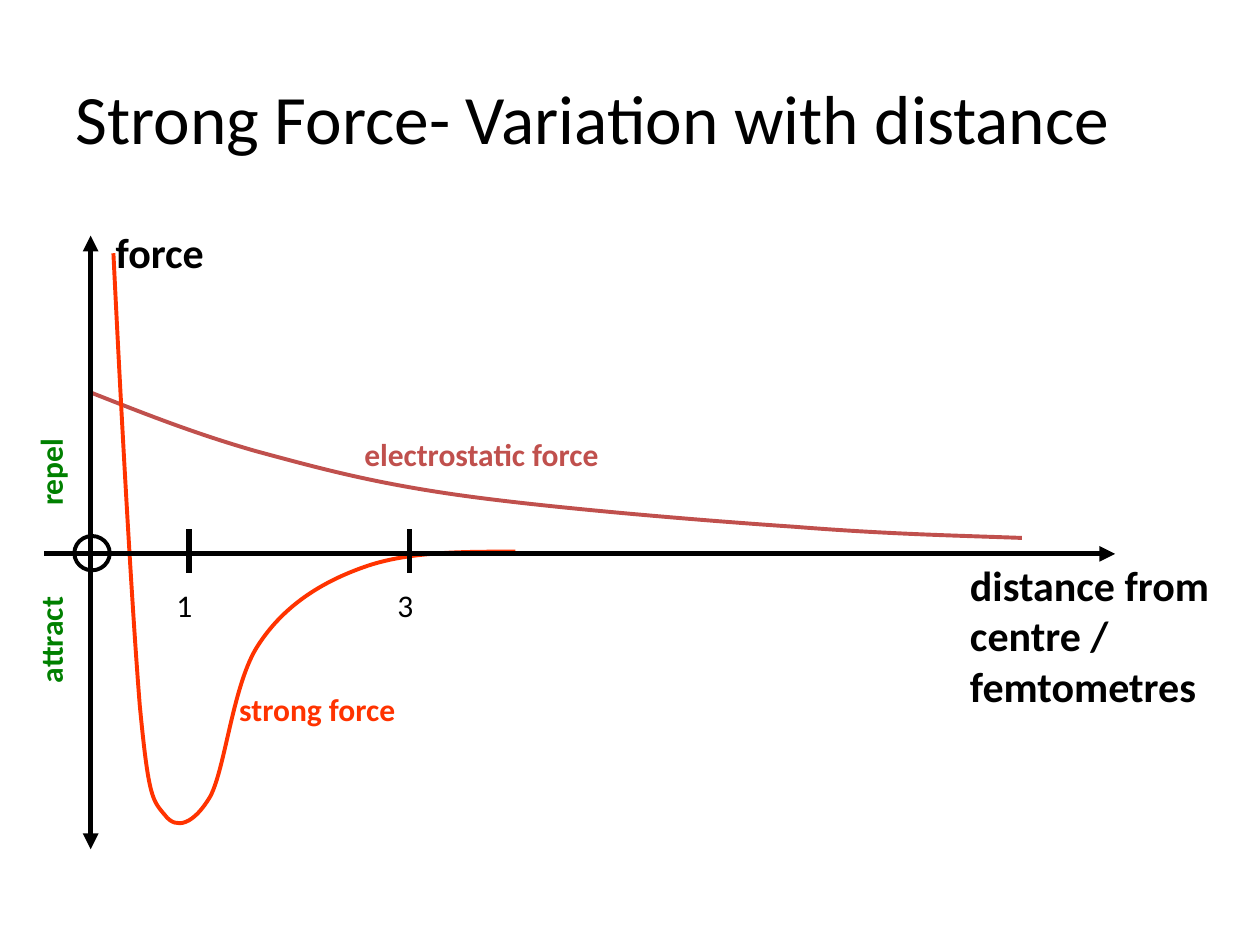
from dataclasses import dataclass

from lxml import etree
from pptx import Presentation
from pptx.dml.color import RGBColor
from pptx.enum import shapes, text
from pptx.oxml import ns
from pptx.util import Pt

FONT = "Calibri"
BLACK = RGBColor(0x00, 0x00, 0x00)
GREEN = RGBColor(0x00, 0x80, 0x00)
BRICK = RGBColor(0xC0, 0x50, 0x4D)
ORANGE = RGBColor(0xFF, 0x33, 0x00)

AXIS_X, AXIS_Y = 51.8, 316.5

Point = tuple[float, float]


@dataclass
class Label:
    words: str
    left: float
    top: float
    width: float
    height: float
    color: RGBColor = BLACK
    size: float = 18
    bold: bool = True
    rotation: float = 0
    tab: float = 0


@dataclass
class Line:
    start: Point
    end: Point
    head: bool = False
    tail: bool = False


@dataclass
class Curve:
    color: RGBColor
    knots: list[Point]  # start, then two controls and an end per section


def add_label(slide, label: Label) -> None:
    sp = slide.shapes.add_textbox(Pt(label.left), Pt(label.top),
                                  Pt(label.width), Pt(label.height))
    sp.rotation = label.rotation
    tf = sp.text_frame
    tf.word_wrap = True
    tf.auto_size = text.MSO_AUTO_SIZE.SHAPE_TO_FIT_TEXT
    p = tf.paragraphs[0]
    p.text = label.words
    if label.tab:
        tabs = etree.SubElement(p._p.get_or_add_pPr(), ns.qn("a:tabLst"))
        etree.SubElement(tabs, ns.qn("a:tab"), pos=str(Pt(label.tab)), algn="l")
    p.font.name, p.font.size, p.font.bold = FONT, Pt(label.size), label.bold
    p.font.color.rgb = label.color


def add_line(slide, line: Line) -> None:
    c = slide.shapes.add_connector(shapes.MSO_CONNECTOR.STRAIGHT,
                                   *map(Pt, line.start + line.end))
    c.line.color.rgb = BLACK
    c.line.width = Pt(3)
    ln = c.line._get_or_add_ln()
    for tag, wanted in (("a:headEnd", line.head), ("a:tailEnd", line.tail)):
        if wanted:
            etree.SubElement(ln, ns.qn(tag), type="triangle")
    etree.SubElement(c._element.spPr, ns.qn("a:effectLst"))


def style_outline(sp, color: RGBColor) -> None:
    sp.shadow.inherit = False
    sp.fill.background()
    sp.line.color.rgb = color
    sp.line.width = Pt(2.25)


def add_curve(slide, curve: Curve) -> None:
    start, *rest = [(Pt(x), Pt(y)) for x, y in curve.knots]
    builder = slide.shapes.build_freeform(*start)
    builder.add_line_segments(rest, close=False)
    sp = builder.convert_to_shape()
    # Turn every three straight pieces into one Bezier section
    pieces = list(sp._element.iter(ns.qn("a:lnTo")))
    for i in range(0, len(pieces), 3):
        section = etree.Element(ns.qn("a:cubicBezTo"))
        pieces[i].addprevious(section)
        for piece in pieces[i:i + 3]:
            section.append(piece[0])
            piece.getparent().remove(piece)
    style_outline(sp, curve.color)


def add_origin(slide) -> None:
    sp = slide.shapes.add_shape(shapes.MSO_SHAPE.OVAL, Pt(42.5), Pt(306.3),
                                Pt(20.2), Pt(19.6))
    style_outline(sp, BLACK)


def add_title(slide, words: str) -> None:
    sp = slide.shapes.title
    sp.left, sp.top, sp.width, sp.height = Pt(36), Pt(21.6), Pt(648), Pt(90)
    tf = sp.text_frame
    tf.auto_size = text.MSO_AUTO_SIZE.NONE
    tf.vertical_anchor = text.MSO_ANCHOR.MIDDLE
    p = tf.paragraphs[0]
    p.text = words
    p.alignment = text.PP_ALIGN.LEFT
    p.font.name, p.font.size = FONT, Pt(39.6)
    p.font.color.rgb = BLACK


ELECTROSTATIC = Curve(BRICK, [
    (52.6, 224.6),
    (82.1, 236.2), (110.9, 247.7), (146.2, 257.8),
    (180.7, 267.1), (211.7, 275.8), (262.8, 283),
    (313.9, 290.2), (400.3, 297.4), (453.6, 301),
    (507.6, 305.3), (545.8, 306), (583.9, 307.4),
])
STRONG = Curve(ORANGE, [
    (294.5, 315.2),
    (263.5, 315.2), (232.6, 315.2), (208.1, 324),
    (183.6, 332.6), (162, 346.3), (147.6, 368.6),
    (133.2, 390.2), (128.9, 438.5), (120.2, 455),
    (110.9, 470.9), (100.8, 474.5), (94.3, 465.8),
    (87.1, 457.2), (85, 456.5), (79.9, 403.2),
    (75.6, 349.2), (69.8, 247), (64.8, 144.7),
])
AXES = [
    Line((AXIS_X, 134.6), (AXIS_X, 485.3), head=True, tail=True),
    Line((25.4, AXIS_Y), (637.2, AXIS_Y), tail=True),
]
AXIS_LABELS = [
    Label("force", 59, 126, 87.8, 41, size=24),
    Label("distance from centre / femtometres", 547.2, 316.2, 192.2, 107.3, size=24),
]
TICKS = {"3": 234.2, "1": 108}


def main() -> None:
    prs = Presentation()
    prs.slide_width, prs.slide_height = Pt(720), Pt(540)
    slide = prs.slides.add_slide(prs.slide_layouts[5])
    add_title(slide, "Strong Force- Variation with distance")

    # Direction of the force, read upwards beside the vertical axis
    add_label(slide, Label("attract\trepel", -86.4, 267.8, 230.4, 28.8, GREEN,
                           rotation=270, tab=101.2))

    # Curves with their names
    add_curve(slide, ELECTROSTATIC)
    add_label(slide, Label("electrostatic force", 201.1, 245.1, 208.8, 33.1, BRICK))
    add_curve(slide, STRONG)
    add_label(slide, Label("strong force", 129.6, 390.6, 140.4, 33.1, ORANGE))

    # Axes, origin and axis names
    for axis in AXES:
        add_line(slide, axis)
    add_origin(slide)
    for label in AXIS_LABELS:
        add_label(slide, label)

    # Ticks on the distance axis
    for words, x in TICKS.items():
        add_line(slide, Line((x, 302.4), (x, 327.6)))
        add_label(slide, Label(words, x - 14.2, 331.2, 40.3, 33.1, bold=False))

    prs.save("out.pptx")


if __name__ == "__main__":
    main()
